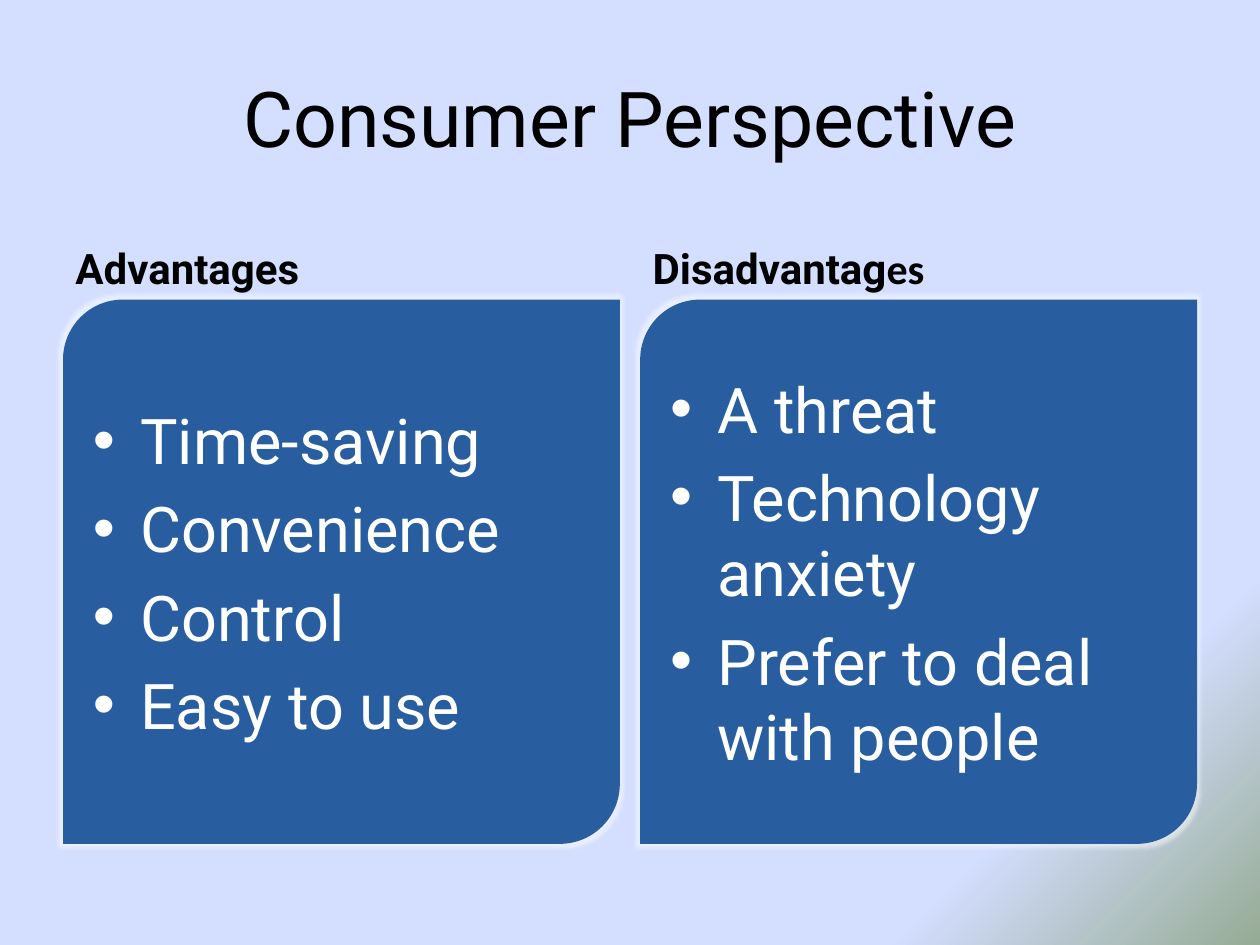
from dataclasses import dataclass

from lxml import etree
from pptx import Presentation
from pptx import util as u
from pptx.dml import color
from pptx.enum import shapes, text
from pptx.oxml import ns


@dataclass(frozen=True)
class Theme:
    sky: str = "D4DEFF"
    sage: str = "96AB94"
    panel: str = "285EA0"
    ink: str = "000000"
    light: str = "FFFFFF"
    font: str = "Roboto"
    accent_font: str = "Calibri"
    title: int = 44
    heading: int = 24
    body: int = 36


@dataclass(frozen=True)
class Box:
    left: float
    top: float
    width: float
    height: float

    def lengths(self):
        return [u.Pt(n) for n in (self.left, self.top, self.width, self.height)]


THEME = Theme()
HEADING_HEIGHT = 50
INDENT = 27
COLUMNS = [
    ([("Advantages", THEME.font)],
     ["Time-saving", "Convenience", "Control", "Easy to use"]),
    ([("Disadvantag", THEME.font), ("es", THEME.accent_font)],
     ["A threat", "Technology anxiety", "Prefer to deal with people"]),
]


def rgb(value):
    return color.RGBColor.from_string(value)


def add_node(parent, tag, **attributes):
    return etree.SubElement(parent, ns.qn(tag), attributes)


def style(para, size, shade, align=text.PP_ALIGN.LEFT):
    para.alignment = align
    para.font.size = u.Pt(size)
    para.font.color.rgb = rgb(shade)
    para.font.name = THEME.font


def paint_background(page):
    fill = page.background.fill
    fill.gradient()
    stops = zip(fill.gradient_stops, ((0.83, THEME.sky), (1, THEME.sage)))
    for stop, (position, shade) in stops:
        stop.position = position
        stop.color.rgb = rgb(shade)
    gradient = page.element.find(".//" + ns.qn("a:gradFill"))
    gradient.remove(gradient.find(ns.qn("a:lin")))
    radial = add_node(gradient, "a:path", path="circle")
    add_node(radial, "a:fillToRect", r="100000", b="100000")


def add_text(page, box, anchor):
    frame = page.shapes.add_textbox(*box.lengths()).text_frame
    frame.word_wrap = True
    frame.vertical_anchor = anchor
    return frame.paragraphs[0]


def add_title(page, box):
    para = add_text(page, box, text.MSO_ANCHOR.MIDDLE)
    para.text = "Consumer Perspective"
    style(para, THEME.title, THEME.ink, text.PP_ALIGN.CENTER)


def add_heading(page, box, parts):
    para = add_text(page, box, text.MSO_ANCHOR.BOTTOM)
    style(para, THEME.heading, THEME.ink)
    para.font.bold = True
    for words, font in parts:
        span = para.add_run()
        span.text = words
        span.font.name = font


def add_bullet(para):
    properties = para._p.get_or_add_pPr()
    properties.set("marL", str(u.Pt(INDENT)))
    properties.set("indent", str(-u.Pt(INDENT)))
    add_node(properties, "a:buFont", typeface="Arial")
    add_node(properties, "a:buChar", char="•")


def add_panel(page, box, items):
    panel = page.shapes.add_shape(
        shapes.MSO_SHAPE.ROUND_2_DIAG_RECTANGLE, *box.lengths())
    panel.adjustments[0] = 0.11
    panel.adjustments[1] = 0
    panel.fill.solid()
    panel.fill.fore_color.rgb = rgb(THEME.panel)
    panel.line.fill.background()
    panel.shadow.inherit = False
    effects = panel.element.spPr.find(ns.qn("a:effectLst"))
    glow = add_node(effects, "a:glow", rad=str(u.Pt(5)))
    shade = add_node(glow, "a:srgbClr", val=THEME.light)
    add_node(shade, "a:alpha", val="50000")

    frame = panel.text_frame
    frame.word_wrap = True
    frame.vertical_anchor = text.MSO_ANCHOR.MIDDLE
    frame.text = "\n".join(items)
    for para in frame.paragraphs:
        style(para, THEME.body, THEME.light)
        para.space_before = u.Pt(THEME.body * 0.2)
        add_bullet(para)


def add_column(page, box, heading, items):
    add_heading(page, Box(box.left, box.top, box.width, HEADING_HEIGHT), heading)
    add_panel(page, Box(box.left, box.top + HEADING_HEIGHT, box.width,
                        box.height - HEADING_HEIGHT), items)


def add_columns(page, box, gap):
    width = (box.width - gap * (len(COLUMNS) - 1)) / len(COLUMNS)
    for index, (heading, items) in enumerate(COLUMNS):
        left = box.left + index * (width + gap)
        add_column(page, Box(left, box.top, width, box.height), heading, items)


def main():
    deck = Presentation()
    deck.slide_width, deck.slide_height = u.Pt(720), u.Pt(540)
    page = deck.slides.add_slide(deck.slide_layouts[6])
    paint_background(page)
    add_title(page, Box(36, 21.6, 648, 90))
    add_columns(page, Box(36, 121.2, 648, 361), gap=11.6)
    deck.save("out.pptx")


if __name__ == "__main__":
    main()
